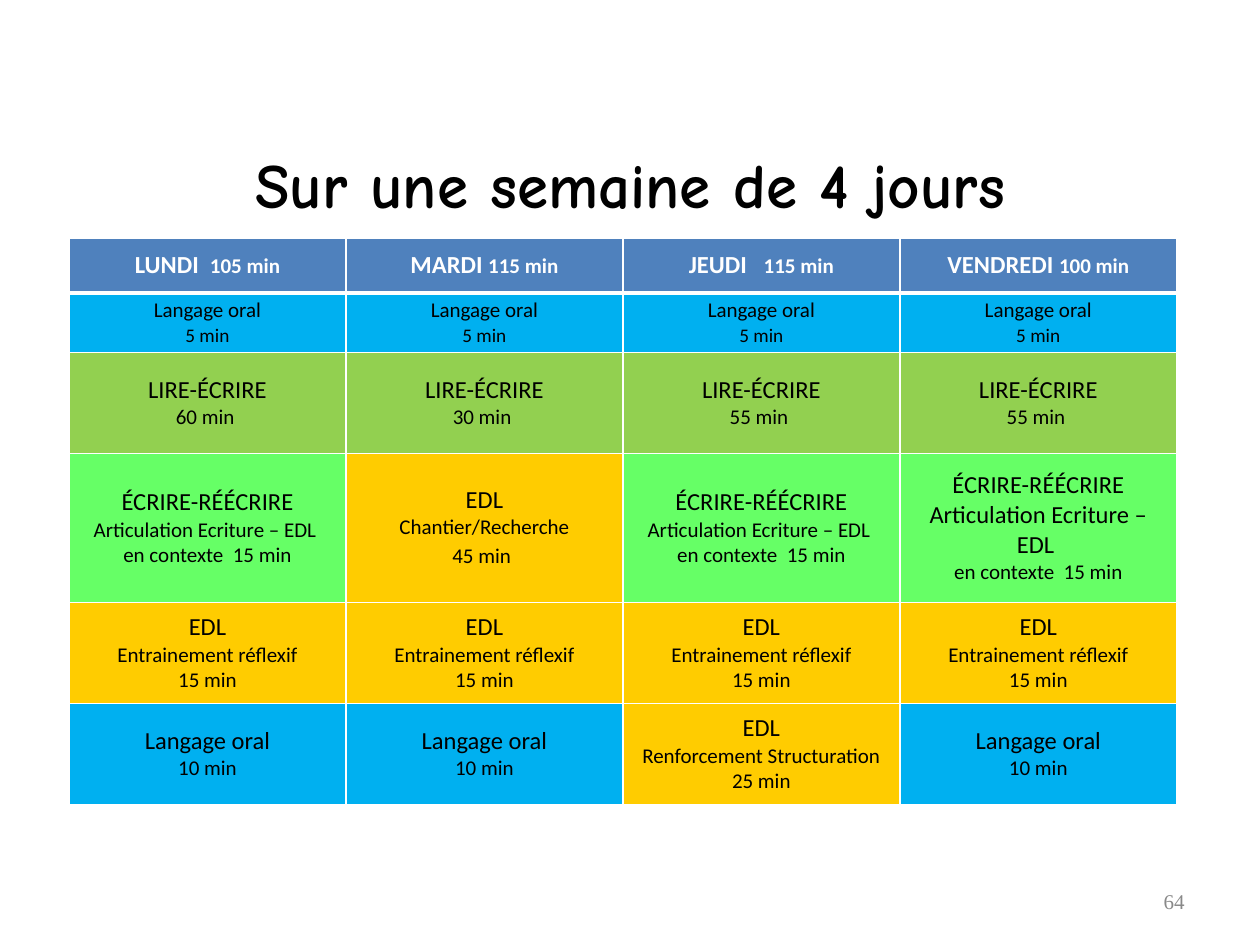
from lxml import etree
from pptx import Presentation
from pptx.dml.color import RGBColor
from pptx.enum.text import MSO_ANCHOR, PP_ALIGN
from pptx.oxml.ns import qn
from pptx.util import Emu, Pt

EMU_PER_PX = 914400 / 126
TITLE_ONLY = 5
CENTER, RIGHT = PP_ALIGN.CENTER, PP_ALIGN.RIGHT
MIDDLE = MSO_ANCHOR.MIDDLE

WHITE, BLACK, GRAY = "FFFFFF", "000000", "898989"
HEADER_BLUE, SKY, OLIVE, GREEN, AMBER = "4F81BD", "00B0F0", "92D050", "66FF66", "FFCC00"

COLUMN_WIDTH = 277
ROW_HEIGHTS = [55, 58, 101, 149, 101, 101]


def px(length):
    return Emu(round(length * EMU_PER_PX))


def rgb(color):
    return RGBColor.from_string(color)


def activity(fill, *lines):
    """Return a cell: its fill and paragraphs, each a list of (text, size) runs.

    The first line is 14 pt and the others 12 pt unless a line is already a list of runs.
    """
    paragraphs = []
    for index, line in enumerate(lines):
        size = 12 if index else 14
        paragraphs.append([(line, size)] if isinstance(line, str) else line)
    return fill, paragraphs


class SlideBuilder:
    font_name = "Calibri"
    border_color = WHITE

    def __init__(self, presentation):
        self.slide = presentation.slides.add_slide(presentation.slide_layouts[TITLE_ONLY])

    def format_paragraph(self, paragraph, color, align, name=None, size=None, bold=False):
        paragraph.alignment = align
        font = paragraph.font
        font.name = name or self.font_name
        font.bold = bold
        font.color.rgb = rgb(color)
        if size:
            font.size = Pt(size)

    def title(self, text, left, top, width, height):
        shape = self.slide.shapes.title
        shape.left, shape.top = px(left), px(top)
        shape.width, shape.height = px(width), px(height)
        frame = shape.text_frame
        frame.text = text
        frame.vertical_anchor = MIDDLE
        self.format_paragraph(frame.paragraphs[0], BLACK, CENTER, "Comic Neue", 36, True)

    def page_number(self, text, left, top, width, height):
        shape = self.slide.shapes.add_textbox(px(left), px(top), px(width), px(height))
        frame = shape.text_frame
        frame.word_wrap = True
        frame.vertical_anchor = MIDDLE
        frame.text = text
        self.format_paragraph(frame.paragraphs[0], GRAY, RIGHT, "Times New Roman", 12)

    def borders(self, cell, top, bottom):
        """Draw the four cell borders, with top and bottom widths in points."""
        properties = cell._tc.get_or_add_tcPr()
        for side, width in (("L", 1), ("R", 1), ("T", top), ("B", bottom)):
            line = etree.SubElement(properties, qn(f"a:ln{side}"), w=str(Pt(width)))
            fill = etree.SubElement(line, qn("a:solidFill"))
            etree.SubElement(fill, qn("a:srgbClr"), val=self.border_color)

    def fill_cell(self, cell, content, is_header):
        fill, paragraphs = content
        cell.fill.solid()
        cell.fill.fore_color.rgb = rgb(fill)
        cell.vertical_anchor = MIDDLE
        cell.margin_left = cell.margin_right = px(10)
        cell.margin_top = cell.margin_bottom = px(5)
        frame = cell.text_frame
        for index, runs in enumerate(paragraphs):
            paragraph = frame.add_paragraph() if index else frame.paragraphs[0]
            color = WHITE if is_header else BLACK
            self.format_paragraph(paragraph, color, CENTER, bold=is_header)
            for text, size in runs:
                run = paragraph.add_run()
                run.text = text
                run.font.size = Pt(size)

    def table(self, rows, left, top, column_width, row_heights):
        column_count = len(rows[0])
        table = self.slide.shapes.add_table(
            len(rows), column_count, px(left), px(top),
            px(column_width * column_count), px(sum(row_heights))).table
        table.first_row = table.horz_banding = False
        for column in table.columns:
            column.width = px(column_width)
        for row_index, row in enumerate(rows):
            table.rows[row_index].height = px(row_heights[row_index])
            for column_index, content in enumerate(row):
                cell = table.cell(row_index, column_index)
                self.borders(cell, 3 if row_index == 1 else 1, 3 if row_index == 0 else 1)
                self.fill_cell(cell, content, row_index == 0)


def week_rows():
    days = [("LUNDI  ", 105), ("MARDI ", 115), ("JEUDI   ", 115), ("VENDREDI ", 100)]
    headers = [activity(HEADER_BLUE, [(day, 14), (f"{minutes} min", 12)])
               for day, minutes in days]
    opening = activity(SKY, [("Langage oral", 12)], [("5 min", 11)])
    reading = [activity(OLIVE, "LIRE-ÉCRIRE", f"{minutes} min ")
               for minutes in (60, 30, 55, 55)]
    writing_title, writing_link = "ÉCRIRE-RÉÉCRIRE", "Articulation Ecriture – EDL "
    writing_time = "en contexte  15 min"
    writing = activity(GREEN, writing_title, writing_link, writing_time)
    large_writing = activity(GREEN, writing_title, [(writing_link, 14)], writing_time)
    research = activity(AMBER, "EDL", "Chantier/Recherche", [("45 min", 12), (" ", 14)])
    training = activity(AMBER, "EDL", "Entrainement réflexif", "15 min")
    closing = activity(SKY, "Langage oral", "10 min")
    structuring = activity(AMBER, "EDL", "Renforcement Structuration", "25 min")
    return [
        headers,
        [opening] * 4,
        reading,
        [writing, research, writing, large_writing],
        [training] * 4,
        [closing, closing, structuring, closing],
    ]


def main():
    presentation = Presentation()
    presentation.slide_width, presentation.slide_height = px(1260), px(945)
    builder = SlideBuilder(presentation)
    builder.title("Sur une semaine de 4 jours ", 139, 127, 1005, 112)
    builder.table(week_rows(), 69, 238, COLUMN_WIDTH, ROW_HEIGHTS)
    builder.page_number("64", 903, 876, 294, 50)
    presentation.save("out.pptx")


if __name__ == "__main__":
    main()
